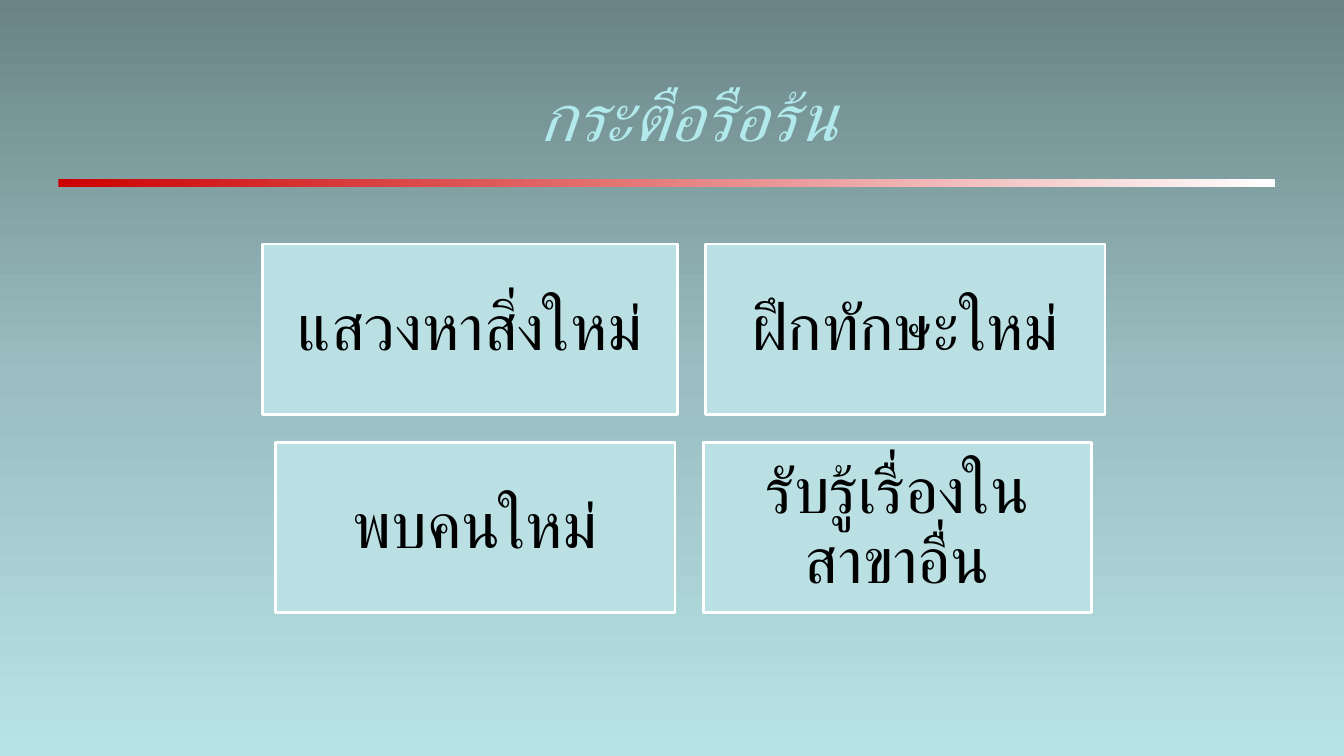
from copy import deepcopy

from lxml import etree
from pptx import Presentation
from pptx.dml.color import RGBColor
from pptx.enum.shapes import MSO_SHAPE
from pptx.enum.text import MSO_ANCHOR, PP_ALIGN
from pptx.oxml.ns import qn
from pptx.util import Inches, Pt

RECT = MSO_SHAPE.RECTANGLE
MIDDLE = MSO_ANCHOR.MIDDLE
CENTER = PP_ALIGN.CENTER
SIDES = ("left", "top", "right", "bottom")


def paint(code):
    return RGBColor.from_string(code)


def adjust(target, values):
    for name, value in values.items():
        setattr(target, name, value)


class Deck:
    face = "Arial"
    panel = "BBE0E3"
    edge = "FFFFFF"
    ink = "000000"

    def __init__(self, wide, high):
        self.show = Presentation()
        adjust(self.show, {"slide_width": Inches(wide), "slide_height": Inches(high)})
        self.slide = self.show.slides.add_slide(self.show.slide_layouts[6])

    def blend(self, fill, root, stops, angle):
        fill.gradient()
        fill.gradient_angle = angle
        marks = root.find(".//" + qn("a:gsLst"))
        while len(marks) < len(stops):
            marks.append(deepcopy(marks[0]))
        for mark, (spot, code) in zip(fill.gradient_stops, stops):
            mark.position = spot
            mark.color.rgb = paint(code)

    def back(self, stops):
        self.blend(self.slide.background.fill, self.slide.element, stops, 270)

    def rect(self, *area):
        shape = self.slide.shapes.add_shape(RECT, *map(Inches, area))
        shape.shadow.inherit = False
        return shape

    def bar(self, area, stops):
        shape = self.rect(*area)
        shape.line.fill.background()
        self.blend(shape.fill, shape.element, stops, 0)

    def label(self, shape, text, size, code, inset=None, space=None, italic=False):
        frame = shape.text_frame
        adjust(frame, {"word_wrap": True, "vertical_anchor": MIDDLE})
        if inset is not None:
            adjust(frame, {f"margin_{side}": Inches(inset) for side in SIDES})
        para = frame.paragraphs[0]
        adjust(para, {"alignment": CENTER, "line_spacing": space})
        run = para.add_run()
        run.text = text
        adjust(run.font, {"name": self.face, "size": Pt(size), "italic": italic})
        run.font.color.rgb = paint(code)
        props = shape.element.find(".//" + qn("a:rPr"))
        etree.SubElement(props, qn("a:cs"), typeface=self.face)

    def title(self, area, text):
        box = self.slide.shapes.add_textbox(*map(Inches, area))
        self.label(box, text, 48, "B1E9ED", italic=True)

    def card(self, area, text):
        shape = self.rect(*area)
        shape.fill.solid()
        shape.fill.fore_color.rgb = paint(self.panel)
        shape.line.color.rgb = paint(self.edge)
        shape.line.width = Pt(2)
        self.label(shape, text, 46, self.ink, inset=0.19, space=0.9)

    def row(self, mid, top, high, gap, cards):
        left = mid - (sum(wide for wide, _ in cards) + gap * (len(cards) - 1)) / 2
        for wide, text in cards:
            self.card((left, top, wide, high), text)
            left += wide + gap


def main():
    deck = Deck(13.33, 7.5)
    deck.back([(0, "6A8486"), (0.5, "9ABEC1"), (1, "B8E3E6")])
    deck.bar((0.58, 1.78, 12.07, 0.08), [(0, "CC0000"), (1, "FFFFFF")])
    deck.title((2.45, 0.62, 8.76, 1.04), "กระตือรือร้น")
    rows = [
        [(4.12, "แสวงหาสิ่งใหม่"), (3.96, "ฝึกทักษะใหม่")],
        [(3.96, "พบคนใหม่"), (3.85, "รับรู้เรื่องในสาขาอื่น")],
    ]
    high, gap = 1.69, 0.28
    for order, cards in enumerate(rows):
        deck.row(6.78, 2.42 + order * (high + gap), high, gap, cards)
    deck.show.save("out.pptx")


if __name__ == "__main__":
    main()
